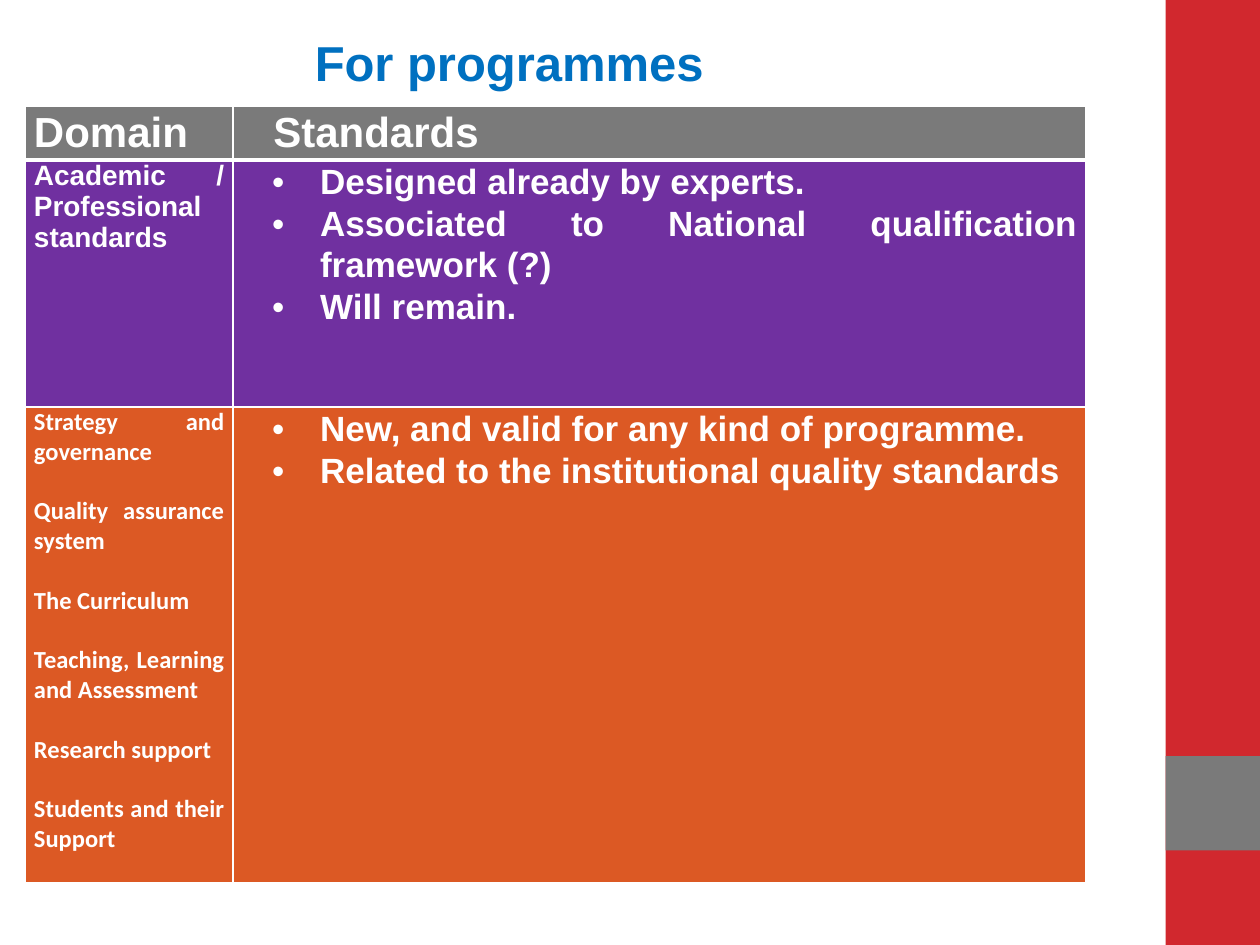
"""Build the programme standards slide."""
from dataclasses import dataclass

from lxml import etree
from pptx import Presentation
from pptx.dml.color import RGBColor
from pptx.enum.shapes import MSO_SHAPE
from pptx.enum.text import PP_ALIGN
from pptx.oxml.ns import qn
from pptx.util import Inches, Pt

RECTANGLE = MSO_SHAPE.RECTANGLE
LEFT, JUSTIFY = PP_ALIGN.LEFT, PP_ALIGN.JUSTIFY


@dataclass(frozen=True)
class Theme:
    white: str = "FFFFFF"
    red: str = "D1282E"
    grey: str = "7A7A7A"
    blue: str = "0070C0"
    purple: str = "7030A0"
    orange: str = "DC5924"
    heading_font: str = "Arial"
    list_font: str = "Calibri"
    title: int = 28
    header: int = 24
    bullet: int = 20
    domain: int = 16
    topic: int = 14


@dataclass(frozen=True)
class TextStyle:
    size: int
    font: str = Theme.heading_font
    color: str = Theme.white
    align: PP_ALIGN = LEFT
    spacing: float = 1.0
    gap: int = 0
    margin: float = 0
    indent: float = 0
    bullet: str = ""


TITLE = TextStyle(Theme.title, color=Theme.blue)
DOMAIN_HEADER = TextStyle(Theme.header, spacing=1.07)
STANDARDS_HEADER = TextStyle(Theme.header, spacing=1.07, margin=0.25)
DOMAIN = TextStyle(Theme.domain, align=JUSTIFY)
TOPICS = TextStyle(Theme.topic, Theme.list_font, align=JUSTIFY, gap=17)
BULLETS = TextStyle(Theme.bullet, align=JUSTIFY, spacing=1.07,
                    margin=0.62, indent=-0.38, bullet="•")

COLUMN_WIDTHS = (1.65, 6.77)
ROWS = (
    (0.43, Theme.grey, 3, (
        (DOMAIN_HEADER, ["Domain"]),
        (STANDARDS_HEADER, ["Standards"]),
    )),
    (1.96, Theme.purple, 1, (
        (DOMAIN, ["Academic / Professional standards"]),
        (BULLETS, ["Designed already by experts.",
                   "Associated to National qualification framework (?)",
                   "Will remain."]),
    )),
    (3.78, Theme.orange, 1, (
        (TOPICS, ["Strategy and governance", "Quality assurance system",
                  "The Curriculum", "Teaching, Learning and Assessment",
                  "Research support", "Students and their Support"]),
        (BULLETS, ["New, and valid for any kind of programme.",
                   "Related to the institutional quality standards"]),
    )),
)


class SlideBuilder:
    def __init__(self, slide, theme):
        self.slide = slide
        self.theme = theme

    def block(self, left, top, width, height, color):
        block = self.slide.shapes.add_shape(
            RECTANGLE, Inches(left), Inches(top), Inches(width), Inches(height))
        block.shadow.inherit = False
        block.fill.solid()
        block.fill.fore_color.rgb = RGBColor.from_string(color)
        block.line.fill.background()

    def text(self, left, top, width, height, style, lines):
        box = self.slide.shapes.add_textbox(
            Inches(left), Inches(top), Inches(width), Inches(height))
        box.text_frame.word_wrap = True
        self.paragraphs(box.text_frame, style, lines)

    def paragraphs(self, frame, style, lines):
        frame.text = "\n".join(lines)
        for index, paragraph in enumerate(frame.paragraphs):
            paragraph.alignment = style.align
            paragraph.line_spacing = style.spacing
            paragraph.space_before = Pt(style.gap if index else 0)
            properties = paragraph._p.get_or_add_pPr()
            properties.set("marL", str(Inches(style.margin)))
            properties.set("indent", str(Inches(style.indent)))
            if style.bullet:
                etree.SubElement(properties, qn("a:buFont"),
                                 typeface=self.theme.heading_font)
                etree.SubElement(properties, qn("a:buChar"), char=style.bullet)
            font = paragraph.font
            font.name, font.size, font.bold = style.font, Pt(style.size), True
            font.color.rgb = RGBColor.from_string(style.color)

    def border(self, cell, side, width):
        line = etree.SubElement(cell._tc.get_or_add_tcPr(), qn(f"a:ln{side}"),
                                w=str(Pt(width)))
        fill = etree.SubElement(line, qn("a:solidFill"))
        etree.SubElement(fill, qn("a:srgbClr"), val=self.theme.white)

    def table(self, left, top, widths, rows):
        height = sum(row[0] for row in rows)
        table = self.slide.shapes.add_table(
            len(rows), len(widths), Inches(left), Inches(top),
            Inches(sum(widths)), Inches(height)).table
        for column, width in zip(table.columns, widths):
            column.width = Inches(width)
        rule_above = 1
        for row, (height, color, rule_below, contents) in zip(table.rows, rows):
            row.height = Inches(height)
            for cell, (style, lines) in zip(row.cells, contents):
                cell.margin_left = cell.margin_right = Inches(0.07)
                cell.margin_top = cell.margin_bottom = 0
                for side, width in zip("LRTB", (1, 1, rule_above, rule_below)):
                    self.border(cell, side, width)
                cell.fill.solid()
                cell.fill.fore_color.rgb = RGBColor.from_string(color)
                self.paragraphs(cell.text_frame, style, lines)
            rule_above = rule_below


def main():
    deck = Presentation()
    deck.slide_width, deck.slide_height = Inches(10), Inches(7.5)
    theme = Theme()
    builder = SlideBuilder(deck.slides.add_slide(deck.slide_layouts[6]), theme)
    builder.block(9.25, 0, 0.75, 7.5, theme.red)
    builder.block(9.25, 6, 0.75, 0.75, theme.grey)
    builder.table(0.2, 0.84, COLUMN_WIDTHS, ROWS)
    builder.text(2.4, 0.21, 6.06, 0.57, TITLE, ["For programmes"])
    deck.save("out.pptx")


if __name__ == "__main__":
    main()
